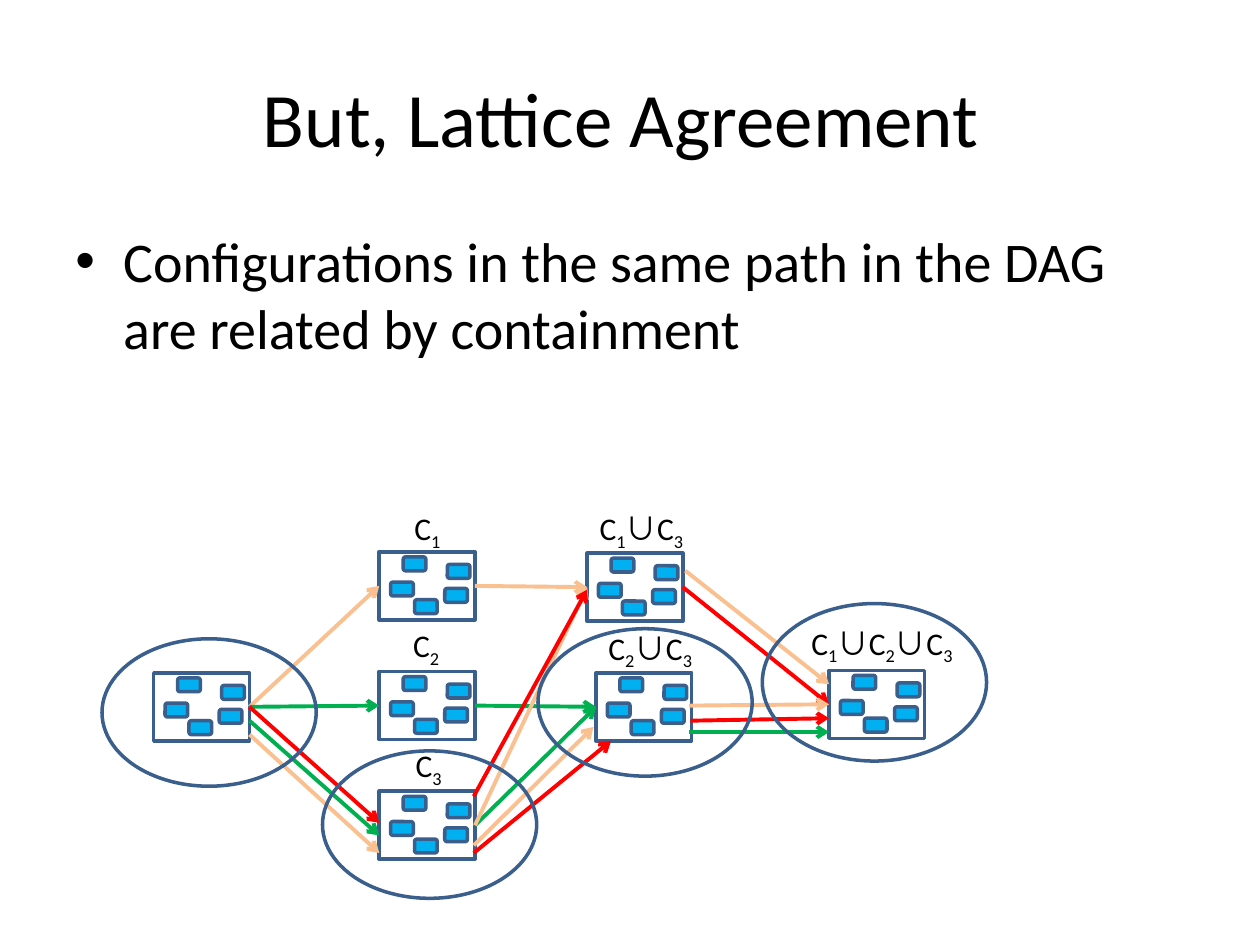
import pptx
import pptx.util
import pptx.dml.color
import pptx.enum.shapes
import pptx.enum.text
import pptx.oxml.ns
import lxml.etree

PX = 9144
INK = {"black": "000000", "edge": "3A5F8C", "chip": "00B0F0",
       "peach": "FAC090", "green": "00B050", "red": "FF0000"}
KIND = pptx.enum.shapes.MSO_SHAPE
qn = pptx.oxml.ns.qn

deck = pptx.Presentation()
deck.slide_width = 1000 * PX
deck.slide_height = 750 * PX
slide = deck.slides.add_slide(deck.slide_layouts[6])


def draw(home, kind, box, fill=None, width=2):
    shape = home.add_shape(kind, *[n * PX for n in box])
    shape.shadow.inherit = False
    if fill:
        shape.fill.solid()
        shape.fill.fore_color.rgb = pptx.dml.color.RGBColor.from_string(INK[fill])
    else:
        shape.fill.background()
    shape.line.color.rgb = pptx.dml.color.RGBColor.from_string(INK["edge"])
    shape.line.width = pptx.util.Pt(width)
    return shape


def write(home, box, parts, size):
    frame = home.add_textbox(*[n * PX for n in box]).text_frame
    frame.word_wrap = True
    para = frame.paragraphs[0]
    for part in parts:
        run = para.add_run()
        run.text = part
        run.font.size = pptx.util.Pt(size)
        run.font.name = "Calibri"
        run.font.color.rgb = pptx.dml.color.RGBColor.from_string(INK["black"])
        if part == "∪":
            run.font.name = "Noto Sans CJK KR"
            east = lxml.etree.SubElement(run.font._element, qn("a:ea"))
            east.set("typeface", "Noto Sans CJK KR")
        elif part.isdigit():
            run.font._element.set("baseline", "-25000")
    return frame


body = write(slide.shapes, (50, 175, 900, 495),
             ["Configurations in the same path in the DAG are related by containment"], 32)
para = body.paragraphs[0]
para.space_before = pptx.util.Pt(6.4)
props = para._p.get_or_add_pPr()
props.set("marL", str(38 * PX))
props.set("indent", str(-38 * PX))
lxml.etree.SubElement(props, qn("a:buFont")).set("typeface", "Arial")
lxml.etree.SubElement(props, qn("a:buChar")).set("char", "•")

title = write(slide.shapes, (50, 30, 900, 125), ["But, Lattice Agreement "], 44)
title.vertical_anchor = pptx.enum.text.MSO_ANCHOR.MIDDLE
title.paragraphs[0].alignment = pptx.enum.text.PP_ALIGN.CENTER

chips = [(19, 4), (52, 29), (9, 24), (54, 10), (28, 38)]
nodes = {
    "start": (122, 534, "", None),
    "c1": (301, 438, "C1", (319, 399, 45, 40)),
    "c2": (301, 533, "C2", (318, 492, 45, 40)),
    "c3": (301, 628, "C3", (320, 587, 45, 40)),
    "c13": (466, 439, "C1∪C3", (466, 399, 92, 40)),
    "c23": (473, 534, "C2∪C3", (473, 494, 92, 40)),
    "c123": (658, 532, "C1∪C2∪C3", (634, 490, 142, 40)),
}
boxes = {}
for name, (x, y, label, place) in nodes.items():
    group = slide.shapes.add_group_shape()
    for dx, dy in chips:
        draw(group.shapes, KIND.ROUNDED_RECTANGLE, (x + dx, y + dy, 18, 11), "chip")
    boxes[name] = draw(group.shapes, KIND.RECTANGLE, (x, y, 76, 54))
    if label:
        write(group.shapes, place, list(label), 18)

edges = [
    ("start", 198, 561, "c1", 301, 465, "peach"),
    ("start", 198, 561, "c2", 301, 560, "green"),
    ("start", 198, 561, "c3", 301, 653, "red"),
    ("start", 198, 572, "c3", 301, 663, "green"),
    ("start", 198, 583, "c3", 301, 677, "peach"),
    ("c1", 377, 465, "c13", 466, 466, "peach"),
    ("c2", 377, 560, "c23", 473, 561, "green"),
    ("c3", 377, 655, "c23", 473, 561, "green"),
    ("c3", 377, 655, "c13", 466, 466, "peach"),
    ("c3", 376, 671, "c23", 471, 577, "peach"),
    ("c3", 376, 632, "c13", 466, 468, "red"),
    ("c3", 376, 677, "c23", 485, 588, "red"),
    ("c13", 542, 466, "c123", 658, 559, "red"),
    ("c13", 544, 453, "c123", 658, 543, "peach"),
    ("c23", 547, 560, "c123", 658, 559, "peach"),
    ("c23", 548, 572, "c123", 658, 570, "red"),
    ("c23", 547, 581, "c123", 658, 581, "green"),
]
for tail, x1, y1, head, x2, y2, hue in edges:
    line = slide.shapes.add_connector(pptx.enum.shapes.MSO_CONNECTOR.STRAIGHT,
                                      x1 * PX, y1 * PX, x2 * PX, y2 * PX)
    if (x1, y1) == (nodes[tail][0] + 76, nodes[tail][1] + 27):
        line.begin_connect(boxes[tail], 3)
    if (x2, y2) == (nodes[head][0], nodes[head][1] + 27):
        line.end_connect(boxes[head], 1)
    line.line.color.rgb = pptx.dml.color.RGBColor.from_string(INK[hue])
    line.line.width = pptx.util.Pt(2.25)
    tip = lxml.etree.SubElement(line.line._get_or_add_ln(), qn("a:tailEnd"))
    tip.set("type", "arrow")
    lxml.etree.SubElement(line._element.spPr, qn("a:effectLst"))

for oval in [(256, 596, 170, 117), (427, 499, 170, 117),
             (605, 479, 178, 125), (81, 507, 170, 117)]:
    draw(slide.shapes, KIND.OVAL, oval)

deck.save("out.pptx")
